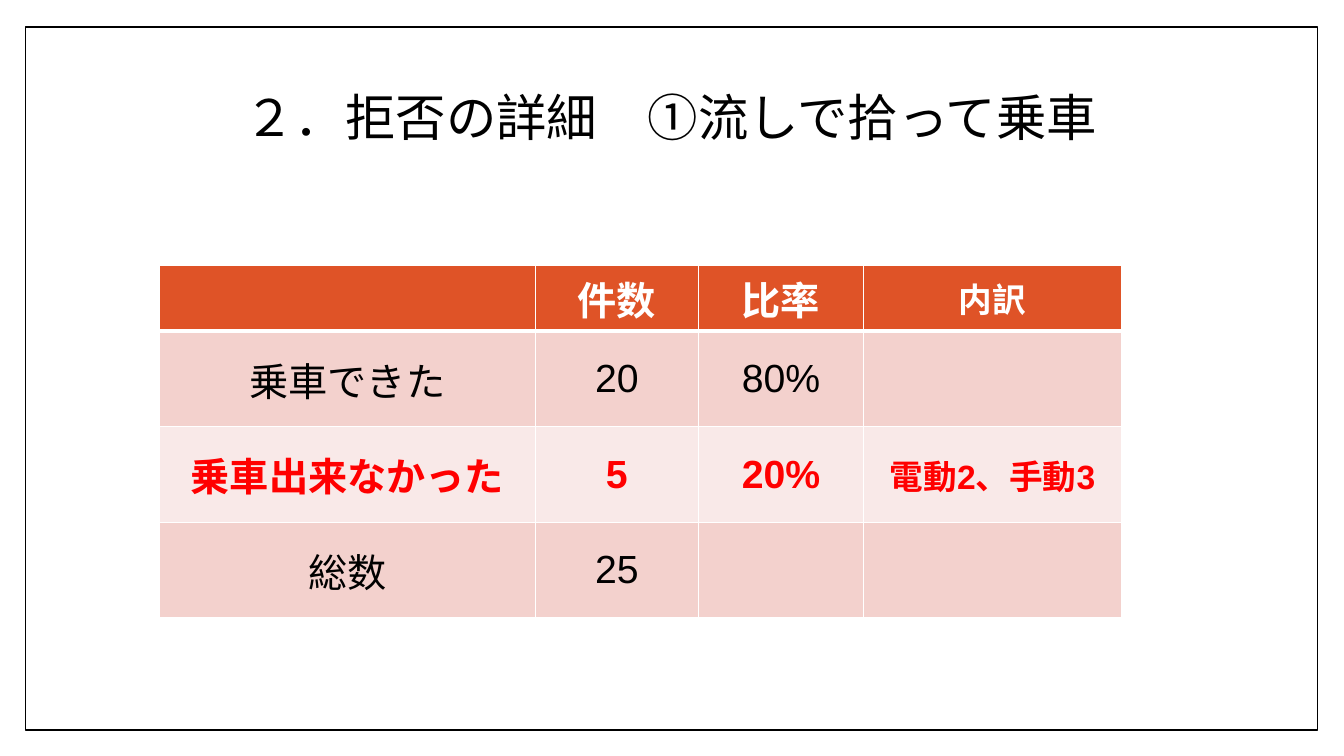
from lxml.etree import SubElement
from pptx import Presentation
from pptx.dml.color import RGBColor
from pptx.enum.shapes import MSO_SHAPE
from pptx.enum.text import MSO_ANCHOR, PP_ALIGN
from pptx.oxml.ns import qn
from pptx.util import Pt

BLACK, WHITE, RED = "000000", "FFFFFF", "FF0000"
HEADER, BAND_DARK, BAND_LIGHT = "DF5327", "F3D1CD", "F9E9E8"


def rgb(color):
    return RGBColor.from_string(color)


class SlideBuilder:
    """Holds the slide and its fonts, and adds elements in points."""

    heading_font = "Cabin"
    number_font = "Arial"

    def __init__(self, prs):
        self.s = prs.slides.add_slide(prs.slide_layouts[6])

    def frame(self, left, top, width, height):
        sp = self.s.shapes.add_shape(
            MSO_SHAPE.RECTANGLE, Pt(left), Pt(top), Pt(width), Pt(height))
        sp.shadow.inherit = False
        sp.fill.solid()
        sp.fill.fore_color.rgb = rgb(WHITE)
        sp.line.color.rgb = rgb(BLACK)
        sp.line.width = Pt(1)

    def put_text(self, tf, text, size, color, bold=False, font=heading_font):
        p = tf.paragraphs[0]
        p.alignment = PP_ALIGN.CENTER
        p.font.size = Pt(size)
        p.font.name = font
        p.font.bold = bold
        p.font.color.rgb = rgb(color)
        p.add_run().text = text
        return p

    def title(self, text, left, top, width, height):
        sp = self.s.shapes.add_textbox(Pt(left), Pt(top), Pt(width), Pt(height))
        tf = sp.text_frame
        tf.word_wrap = True
        tf.vertical_anchor = MSO_ANCHOR.MIDDLE
        self.put_text(tf, text, 36, BLACK).line_spacing = 0.9

    def borders(self, cell, bottom):
        """Draw white cell borders; they must come before the fill."""
        tc_pr = cell._tc.get_or_add_tcPr()
        for side, width in (("L", 1), ("R", 1), ("T", 1), ("B", bottom)):
            ln = SubElement(tc_pr, qn(f"a:ln{side}"), w=str(Pt(width)))
            fill = SubElement(ln, qn("a:solidFill"))
            SubElement(fill, qn("a:srgbClr"), val=WHITE)

    def table(self, left, top, widths, heights, rows, styles):
        """Each style is (fill, text colour, bold); the last column has smaller text."""
        table = self.s.shapes.add_table(
            len(rows), len(widths), Pt(left), Pt(top),
            Pt(sum(widths)), Pt(sum(heights))).table
        for column, width in zip(table.columns, widths):
            column.width = Pt(width)
        for i, (texts, (fill, color, bold)) in enumerate(zip(rows, styles)):
            table.rows[i].height = Pt(heights[i])
            for j, text in enumerate(texts):
                cell = table.cell(i, j)
                self.borders(cell, bottom=3 if i == 0 else 1)
                cell.fill.solid()
                cell.fill.fore_color.rgb = rgb(fill)
                cell.vertical_anchor = MSO_ANCHOR.MIDDLE
                if text:
                    size = 24 if j == len(widths) - 1 else 28
                    font = self.number_font if i and j else self.heading_font
                    self.put_text(cell.text_frame, text, size, color, bold, font)


def main():
    prs = Presentation()
    prs.slide_width, prs.slide_height = Pt(960), Pt(540)
    slide = SlideBuilder(prs)
    slide.frame(18, 19.4, 923, 502)
    slide.title("２．拒否の詳細　①流しで拾って乗車", 90.7, 61.2, 776.9, 49.7)
    slide.table(
        113.9, 189.4,
        widths=[268.4, 116.6, 118, 184.2],
        heights=[47.2, 68.3, 68.3, 68.3],
        rows=[
            ["", "件数", "比率", "内訳"],
            ["乗車できた", "20", "80%", ""],
            ["乗車出来なかった", "5", "20%", "電動2、手動3"],
            ["総数", "25", "", ""],
        ],
        styles=[
            (HEADER, WHITE, True),
            (BAND_DARK, BLACK, False),
            (BAND_LIGHT, RED, True),
            (BAND_DARK, BLACK, False),
        ])
    prs.save("out.pptx")


if __name__ == "__main__":
    main()
